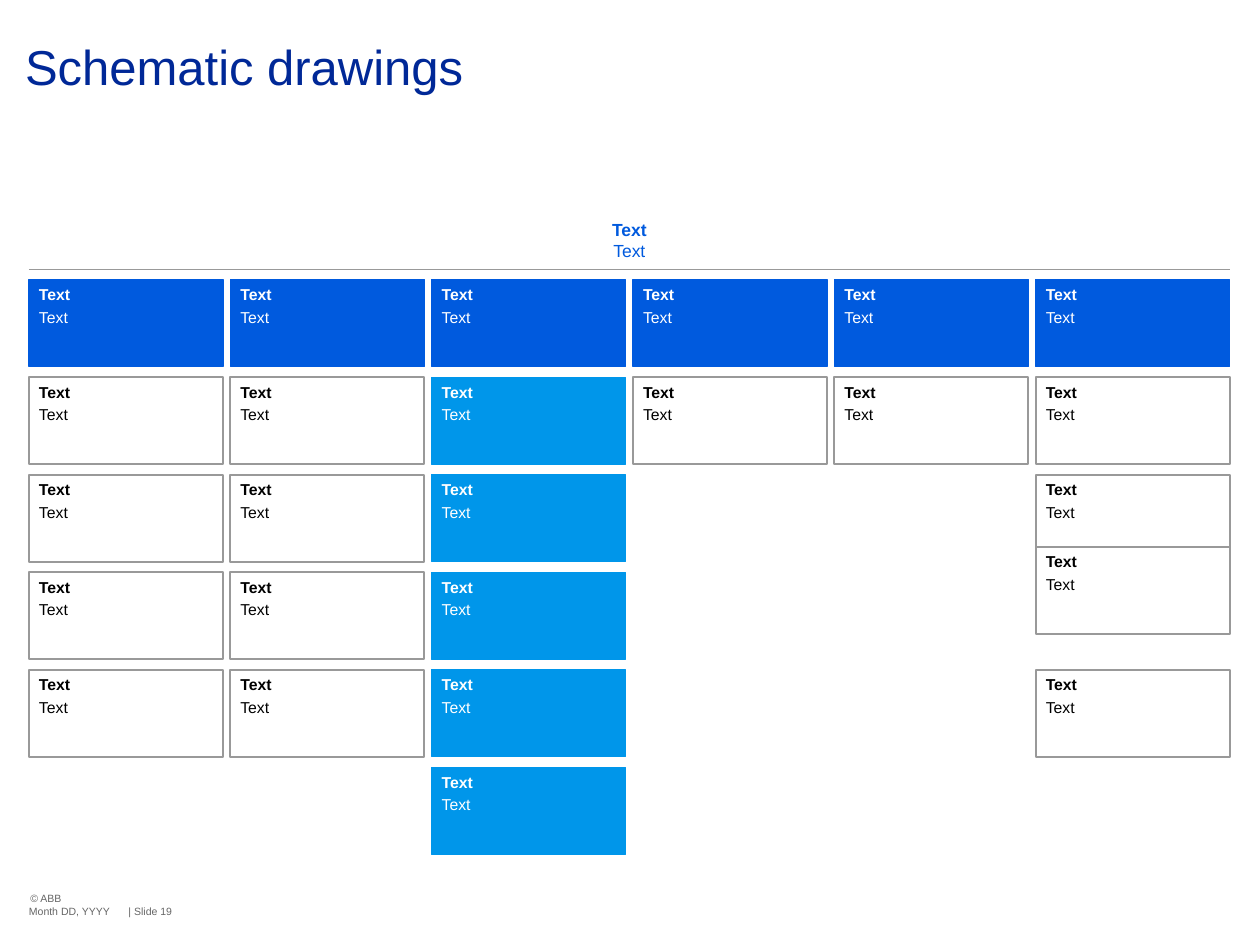
"""Build the "Schematic drawings" slide: a heading over six columns of boxes."""
import pptx
import pptx.dml.color
import pptx.enum.shapes
import pptx.enum.text
import pptx.oxml
import pptx.util

Inches = pptx.util.Inches
Pt = pptx.util.Pt
Color = pptx.dml.color.RGBColor.from_string
Align = pptx.enum.text.PP_ALIGN
Anchor = pptx.enum.text.MSO_ANCHOR

THEME = {
    "font": "Arial",
    "title": {"size": 28, "color": "002897"},
    "heading": {"size": 10, "color": "005ADE"},
    "footer": {"size": 6, "color": "666666"},
    "rule": {"line": "999999", "width": 1},
    "header": {"fill": "005ADE", "line": "005ADE", "width": 0.75, "size": 9, "color": "FFFFFF"},
    "accent": {"fill": "0096EA", "line": "0096EA", "width": 0.75, "size": 9, "color": "FFFFFF"},
    "plain": {"fill": "FFFFFF", "line": "999999", "width": 1, "size": 9, "color": "000000"},
}


def add_run(paragraph, text, style, bold=False):
    run = paragraph.add_run()
    run.text = text
    values = {"name": THEME["font"], "size": Pt(style["size"]), "bold": bold}
    for name, value in values.items():
        setattr(run.font, name, value)
    run.font.color.rgb = Color(style["color"])


def format_frame(shape, margins, anchor=Anchor.TOP, wrap=True):
    left, top, right, bottom = (Inches(margin) for margin in margins)
    values = {"margin_left": left, "margin_top": top, "margin_right": right,
              "margin_bottom": bottom, "vertical_anchor": anchor, "word_wrap": wrap}
    for name, value in values.items():
        setattr(shape.text_frame, name, value)
    return shape.text_frame


presentation = pptx.Presentation()
presentation.slide_width = Inches(10)
presentation.slide_height = Inches(7.5)
slide = presentation.slides.add_slide(presentation.slide_layouts[6])
shapes = slide.shapes

footers = [
    ("© ABB", (0.24, 7.08, 1.22, 0.1), Anchor.TOP, False),
    ("| Slide 19", (1.02, 7.18, 0.53, 0.1), Anchor.MIDDLE, True),
    ("Month DD, YYYY", (0.23, 7.18, 0.8, 0.11), Anchor.TOP, False),
]
for text, bounds, anchor, wrap in footers:
    footer = shapes.add_textbox(*map(Inches, bounds))
    frame = format_frame(footer, (0, 0, 0, 0), anchor, wrap)
    add_run(frame.paragraphs[0], text, THEME["footer"])

title = shapes.add_textbox(Inches(0), Inches(0), Inches(10), Inches(1.74))
paragraph = format_frame(title, (0.2, 0.34, 0.24, 0)).paragraphs[0]
paragraph.line_spacing = 0.9
add_run(paragraph, "Schematic drawings", THEME["title"])

heading = shapes.add_textbox(Inches(0.23), Inches(1.74), Inches(9.53), Inches(0.34))
paragraph = format_frame(heading, (0, 0, 0, 0)).paragraphs[0]
paragraph.alignment = Align.CENTER
add_run(paragraph, "Text", THEME["heading"], bold=True)
paragraph.add_line_break()
add_run(paragraph, "Text", THEME["heading"])

rule = shapes.add_connector(pptx.enum.shapes.MSO_CONNECTOR.STRAIGHT,
                            Inches(0.23), Inches(2.14), Inches(9.76), Inches(2.14))
rule.line.color.rgb = Color(THEME["rule"]["line"])
rule.line.width = Pt(THEME["rule"]["width"])
rule._element.spPr.append(pptx.oxml.parse_xml(
    '<a:effectLst xmlns:a="http://schemas.openxmlformats.org/drawingml/2006/main"/>'))

grid_left, grid_top = 0.23, 2.22
box_width, box_height = 1.54, 0.69
column_pitch = (8.22 - grid_left) / 5
row_pitch = (6.09 - grid_top) / 5
box_counts = [4, 4, 5, 1, 1, 4]
accent_column = 2
raised_box, raise_height = (5, 3), 0.2

for column, count in enumerate(box_counts):
    for row in range(count + 1):
        kind = "header" if row == 0 else "accent" if column == accent_column else "plain"
        style = THEME[kind]
        left = grid_left + column * column_pitch
        top = grid_top + row * row_pitch
        if (column, row) == raised_box:
            top -= raise_height
        box = shapes.add_shape(pptx.enum.shapes.MSO_SHAPE.RECTANGLE, Inches(left),
                               Inches(top), Inches(box_width), Inches(box_height))
        box.shadow.inherit = False
        box.fill.solid()
        box.fill.fore_color.rgb = Color(style["fill"])
        box.line.color.rgb = Color(style["line"])
        box.line.width = Pt(style["width"])
        frame = format_frame(box, (0.08, 0.04, 0.08, 0.04))
        label, detail = frame.paragraphs[0], frame.add_paragraph()
        label.alignment = detail.alignment = Align.LEFT
        detail.space_before = Pt(2)
        add_run(label, "Text", style, bold=True)
        add_run(detail, "Text", style)

presentation.save("out.pptx")
